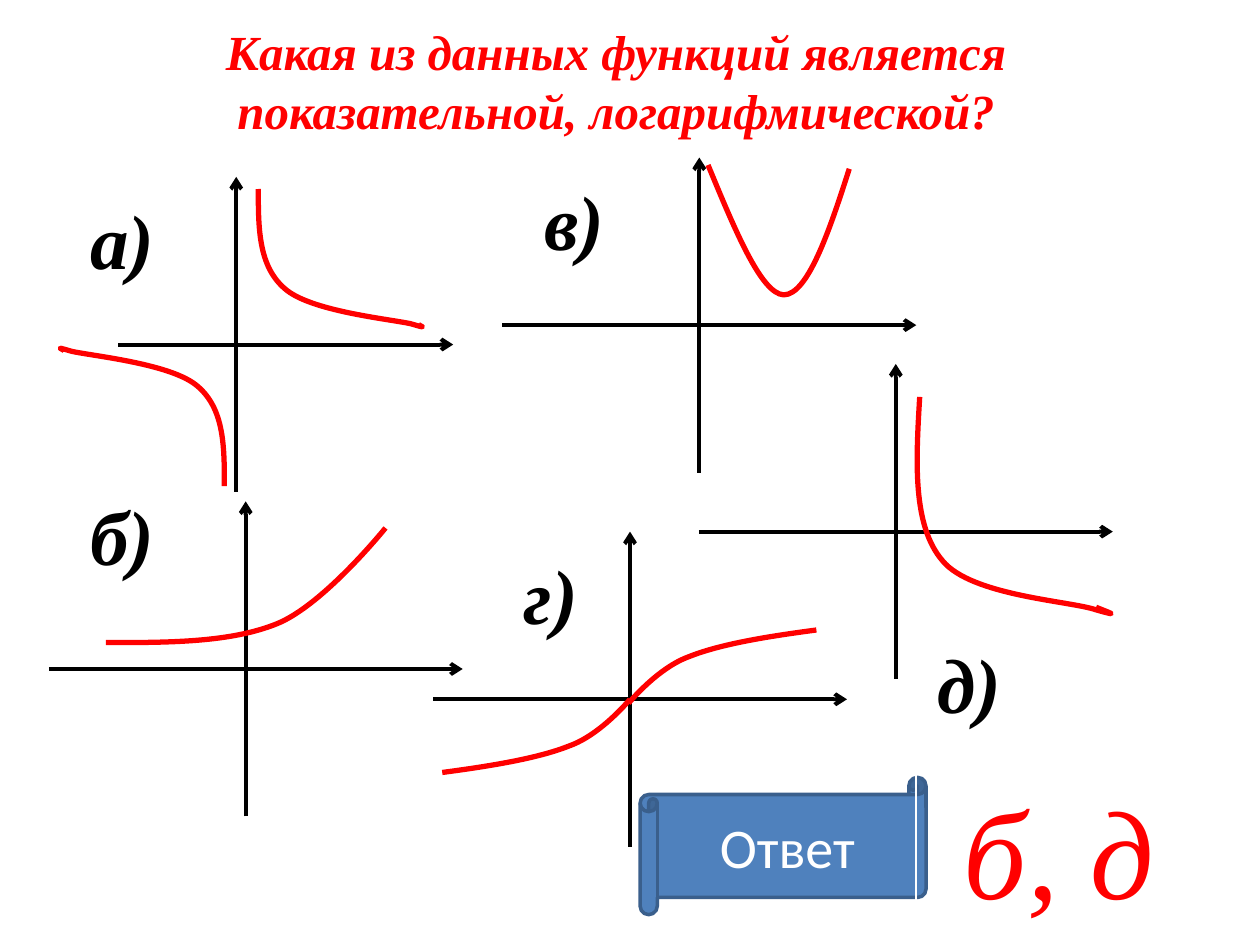
from dataclasses import dataclass

from lxml import etree
from pptx import Presentation
from pptx import util as u
from pptx.dml.color import RGBColor
from pptx.enum import shapes, text
from pptx.oxml.ns import qn


@dataclass(frozen=True)
class Theme:
    serif: str = "Times New Roman"
    sans: str = "Calibri"
    accent: RGBColor = RGBColor(255, 0, 0)
    ink: RGBColor = RGBColor(0, 0, 0)
    paper: RGBColor = RGBColor(255, 255, 255)
    scroll: RGBColor = RGBColor(0x4F, 0x81, 0xBD)
    scroll_edge: RGBColor = RGBColor(0x3A, 0x5F, 0x8C)
    title_size: float = 28
    label_size: float = 44
    button_size: float = 32
    answer_size: float = 72
    axis_width: float = 2.25
    curve_width: float = 3


THEME = Theme()
REACH_LEFT, REACH_RIGHT, REACH_UP, REACH_DOWN = 112.5, 124, 95.8, 84.2

HYPERBOLA = [(147.6, 108), (147.6, 130.3), (147.6, 151.9), (162.7, 164.9),
             (177.1, 177.8), (221.8, 182.2), (234.7, 185),
             (247, 188.6), (238.3, 185.8), (239, 185)]
PARABOLA = [(404.6, 94.3), (419.8, 131), (434.9, 167.8), (447.8, 168.5),
            (461.5, 168.5), (473.8, 132.5), (485.3, 96.5)]
EXPONENT = [(60.5, 367.2), (96.5, 367.2), (131.8, 367.2), (158.4, 356.4),
            (185, 345.6), (220.3, 301.7), (220.3, 301.7)]
CUBE_ROOT = [(252.7, 441.4), (280.1, 437.8), (307.4, 433.4), (325.4, 426.2),
             (343.4, 419.8), (360, 399.6), (360, 399.6)]
LOGARITHM = [(525.6, 226.8), (523.4, 263.5), (521.3, 300.2), (538.6, 320.4),
             (555.1, 340.6), (612, 343.4), (626.4, 348.5),
             (641.5, 352.8), (633.6, 349.9), (626.4, 347)]


def box(left, top, width, height):
    return [u.Pt(length) for length in (left, top, width, height)]


def write(shape, wording, font_name, size, color, bold=False, italic=False,
          align=None, anchor=None):
    frame = shape.text_frame
    frame.text = wording
    if anchor is not None:
        frame.vertical_anchor = anchor
    paragraph = frame.paragraphs[0]
    if align is not None:
        paragraph.alignment = align
    font = paragraph.font
    font.name, font.size, font.color.rgb = font_name, u.Pt(size), color
    font.bold, font.italic = bold, italic


def outline(shape, color, width):
    shape.line.color.rgb = color
    shape.line.width = u.Pt(width)


def add_arrow(slide, start, end):
    arrow = slide.shapes.add_connector(
        shapes.MSO_CONNECTOR.STRAIGHT, *box(*start, *end))
    outline(arrow, THEME.ink, THEME.axis_width)
    etree.SubElement(arrow.line._get_or_add_ln(), qn("a:tailEnd"), type="arrow")
    etree.SubElement(arrow._element.spPr, qn("a:effectLst"))


def add_axes(slide, x, y, reach_left=REACH_LEFT):
    add_arrow(slide, (x - reach_left, y), (x + REACH_RIGHT, y))
    add_arrow(slide, (x, y + REACH_DOWN), (x, y - REACH_UP))


def add_curve(slide, points):
    start, *rest = [(u.Pt(x), u.Pt(y)) for x, y in points]
    builder = slide.shapes.build_freeform(*start)
    builder.add_line_segments(rest, close=False)
    curve = builder.convert_to_shape()
    segments = list(curve._element.iter(qn("a:lnTo")))
    for first in range(0, len(segments), 3):
        bezier = etree.Element(qn("a:cubicBezTo"))
        segments[first].addprevious(bezier)
        for segment in segments[first:first + 3]:
            bezier.append(segment[0])
            segment.getparent().remove(segment)
    curve.fill.background()
    outline(curve, THEME.accent, THEME.curve_width)
    curve.shadow.inherit = False


def reflect(points, x, y):
    return [(2 * x - px, 2 * y - py) for px, py in points]


def add_label(slide, letter, left, top):
    label = slide.shapes.add_textbox(*box(left, top, 62, 60.5))
    write(label, letter, THEME.serif, THEME.label_size, THEME.ink,
          bold=True, italic=True)
    label.text_frame.auto_size = text.MSO_AUTO_SIZE.SHAPE_TO_FIT_TEXT


def add_title(slide, wording):
    title = slide.shapes.title
    title.left, title.top, title.width, title.height = box(74, 16.5, 556, 59)
    write(title, wording, THEME.serif, THEME.title_size, THEME.accent,
          bold=True, italic=True, align=text.PP_ALIGN.CENTER,
          anchor=text.MSO_ANCHOR.MIDDLE)


def add_button(slide, wording):
    button = slide.shapes.add_shape(
        shapes.MSO_SHAPE.HORIZONTAL_SCROLL, *box(365.8, 444.2, 163.4, 78.5))
    button.fill.solid()
    button.fill.fore_color.rgb = THEME.scroll
    outline(button, THEME.scroll_edge, 2)
    button.shadow.inherit = False
    write(button, wording, THEME.sans, THEME.button_size, THEME.paper,
          align=text.PP_ALIGN.CENTER, anchor=text.MSO_ANCHOR.MIDDLE)


def add_answer(slide, wording):
    answer = slide.shapes.add_shape(
        shapes.MSO_SHAPE.RECTANGLE, *box(523.4, 438.5, 163.4, 94.3))
    answer.fill.background()
    outline(answer, THEME.paper, 0.75)
    answer.shadow.inherit = False
    write(answer, wording, THEME.serif, THEME.answer_size, THEME.accent,
          italic=True, align=text.PP_ALIGN.CENTER, anchor=text.MSO_ANCHOR.TOP)
    answer.text_frame.auto_size = text.MSO_AUTO_SIZE.SHAPE_TO_FIT_TEXT


def main():
    deck = Presentation()
    deck.slide_width, deck.slide_height = u.Pt(720), u.Pt(540)
    slide = deck.slides.add_slide(deck.slide_layouts[5])
    add_title(slide, "Какая из данных функций является "
                     "показательной, логарифмической?")

    add_axes(slide, 135, 196.9, reach_left=67.3)
    for x, y in ((399.6, 185.8), (140.4, 382.3), (360, 399.6), (511.9, 303.8)):
        add_axes(slide, x, y)

    for points in (HYPERBOLA, reflect(HYPERBOLA, 137.9, 192.9), PARABOLA,
                   EXPONENT, CUBE_ROOT, reflect(CUBE_ROOT, 359.6, 400.7),
                   LOGARITHM):
        add_curve(slide, points)

    for letter, left, top in (("а)", 44.6, 106.6), ("б)", 44.6, 275.8),
                              ("в)", 303.8, 95.8), ("г)", 292.3, 309.6),
                              ("д)", 528.5, 360)):
        add_label(slide, letter, left, top)

    add_button(slide, "Ответ")
    add_answer(slide, "б, д")
    deck.save("out.pptx")


if __name__ == "__main__":
    main()
